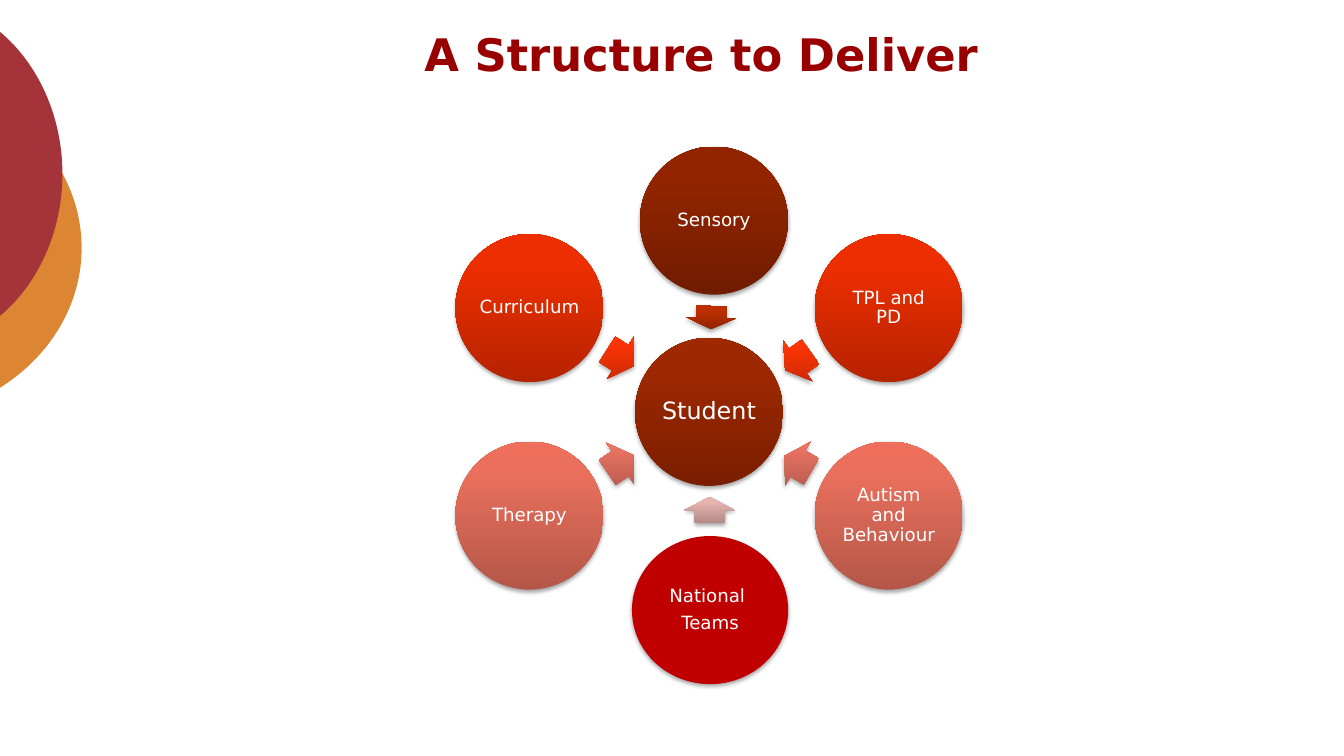
from dataclasses import dataclass

from lxml.etree import SubElement
from pptx import Presentation
from pptx.dml.color import RGBColor
from pptx.enum.shapes import MSO_SHAPE as Preset
from pptx.enum.text import MSO_ANCHOR as Anchor, PP_ALIGN as Align
from pptx.oxml import parse_xml
from pptx.oxml.ns import nsdecls, qn
from pptx.shapes.autoshape import Shape
from pptx.slide import Slide
from pptx.text.text import TextFrame
from pptx.util import Pt

Shades = tuple[str, ...]
Point = tuple[float, float]


@dataclass(frozen=True)
class Theme:
    font: str = "DejaVu Sans"
    title_size: float = 32
    centre_size: float = 17
    label_size: float = 13
    title: str = "990000"
    label: str = "FFFFFF"
    orange: str = "DC8633"
    crimson: str = "A4343A"
    # Gradients run from the bottom (dark) to the top (light).
    student: Shades = ("7A1E00", "9E2800", "9F2800")
    sensory: Shades = ("711C00", "922500", "932500")
    sensory_arrow: Shades = ("912400", "BD2F00", "BE2F00")
    scarlet: Shades = ("B62300", "ED2E00", "EE2E00")
    scarlet_arrow: Shades = ("C52804", "FF3506", "FF3607")
    salmon: Shades = ("B45748", "EA705D", "EE6F5B")
    salmon_arrow: Shades = ("B5594C", "EB7463", "EF7260")
    national: Shades = ("C00000",)
    national_arrow: Shades = ("B28A87", "E7B3AF", "E9B3AF")


@dataclass(frozen=True)
class Circle:
    """A labelled circle, placed by its offset from the hub."""
    text: str
    dx: float
    dy: float
    shades: Shades
    size: float = 13
    width: float = 105.8


@dataclass(frozen=True)
class Arrow:
    """An arrow towards the hub, placed by its offset from the hub."""
    dx: float
    dy: float
    rotation: float
    shades: Shades
    length: float = 22.3


@dataclass(frozen=True)
class EdgeCurve:
    """A bulge from the left slide edge, drawn inside a wider frame."""
    left: float
    top: float
    width: float
    height: float
    middle: float
    shoulder: Point
    neck: Point
    half_height: float
    color: str


THEME = Theme()
HUB_X, HUB_Y = 506.5, 294.2
DIAMETER, ARROW_HEIGHT = 105.8, 36
SIDE_X, SIDE_Y = 128.3, 74.1
ARROW_X, ARROW_Y = 63.4, 37
EDGE_X = -1.4
GRADIENT_STOPS = (0, 80000, 100000)

CURVES = [
    EdgeCurve(-223.2, 54, 281.5, 246.2, 177.1, (36, 77.8), (58.3, 40.3),
              100.8, THEME.orange),
    EdgeCurve(-167.8, 0, 212.4, 248.4, 124.2, (27.4, 79.4), (44.6, 40.7),
              102.6, THEME.crimson),
]
STUDENT = Circle("Student", 0, 0, THEME.student, THEME.centre_size)
SPOKES = [
    (Arrow(1.5, -67.3, 91.3, THEME.sensory_arrow, 16.6),
     Circle("Sensory", 3.5, -136.6, THEME.sensory)),
    (Arrow(ARROW_X, -36.4, 144.3, THEME.scarlet_arrow),
     Circle("TPL and PD", SIDE_X, -SIDE_Y, THEME.scarlet)),
    (Arrow(ARROW_X, ARROW_Y, 209.8, THEME.salmon_arrow),
     Circle("Autism and Behaviour", SIDE_X, SIDE_Y, THEME.salmon)),
    (Arrow(0.4, 70.1, 270, THEME.national_arrow, 18.7),
     Circle("National \nTeams", 0.7, 141.6, THEME.national, width=111.6)),
    (Arrow(-ARROW_X, ARROW_Y, 326, THEME.salmon_arrow),
     Circle("Therapy", -SIDE_X, SIDE_Y, THEME.salmon)),
    (Arrow(-ARROW_X, -38.6, 32.5, THEME.scarlet_arrow),
     Circle("Curriculum", -SIDE_X, -SIDE_Y, THEME.scarlet)),
]


def fill_solid(shape: Shape, color: str) -> None:
    shape.fill.solid()
    shape.fill.fore_color.rgb = RGBColor.from_string(color)


def fill_gradient(shape: Shape, shades: Shades) -> None:
    """Fill bottom to top, independent of the shape's rotation."""
    gradient = parse_xml(f'<a:gradFill {nsdecls("a")} rotWithShape="0"/>')
    stops = SubElement(gradient, qn("a:gsLst"))
    for position, shade in zip(GRADIENT_STOPS, shades):
        stop = SubElement(stops, qn("a:gs"), pos=str(position))
        SubElement(stop, qn("a:srgbClr"), val=shade)
    SubElement(gradient, qn("a:lin"), ang="16200000", scaled="0")
    shape._element.spPr.find(qn("a:prstGeom")).addnext(gradient)


def add_shadow(shape: Shape) -> None:
    shape.shadow.inherit = False
    effects = shape._element.spPr.find(qn("a:effectLst"))
    shadow = SubElement(effects, qn("a:outerShdw"), blurRad=str(Pt(3.1)),
                        dist=str(Pt(1.8)), dir="5400000", rotWithShape="0")
    color = SubElement(shadow, qn("a:srgbClr"), val="000000")
    SubElement(color, qn("a:alpha"), val="35000")


def add_hub_shape(page: Slide, preset: Preset, dx: float, dy: float,
                  width: float, height: float, shades: Shades) -> Shape:
    """Add a shadowed shape centred at an offset from the hub."""
    shape = page.shapes.add_shape(
        preset, Pt(HUB_X + dx - width / 2), Pt(HUB_Y + dy - height / 2),
        Pt(width), Pt(height))
    shape.line.fill.background()
    if len(shades) == 1:
        fill_solid(shape, shades[0])
    else:
        fill_gradient(shape, shades)
    add_shadow(shape)
    return shape


def format_text(frame: TextFrame, size: float, color: str, bold: bool = False) -> None:
    frame.word_wrap = True
    for para in frame.paragraphs:
        para.alignment = Align.CENTER
        for span in para.runs:
            span.font.name = THEME.font
            span.font.size = Pt(size)
            span.font.bold = bold
            span.font.color.rgb = RGBColor.from_string(color)


def add_circle(page: Slide, circle: Circle) -> None:
    shape = add_hub_shape(page, Preset.OVAL, circle.dx, circle.dy,
                          circle.width, DIAMETER, circle.shades)
    frame = shape.text_frame
    frame.text = circle.text
    frame.vertical_anchor = Anchor.MIDDLE
    frame.margin_left = frame.margin_right = Pt(1.4)
    frame.margin_top = frame.margin_bottom = Pt(1.4)
    format_text(frame, circle.size, THEME.label)
    for para in frame.paragraphs:
        para.line_spacing = 0.9
        para.space_after = Pt(0.35 * circle.size)


def add_arrow(page: Slide, arrow: Arrow) -> None:
    shape = add_hub_shape(page, Preset.RIGHT_ARROW, arrow.dx, arrow.dy,
                          arrow.length, ARROW_HEIGHT, arrow.shades)
    shape.adjustments[0] = 0.6
    shape.adjustments[1] = 0.5
    shape.rotation = arrow.rotation


def add_edge_curve(page: Slide, curve: EdgeCurve) -> None:
    """Draw two mirrored cubic curves that meet at the tip."""
    start = (EDGE_X, -curve.half_height)
    tip = (curve.neck[0], 0)
    (shoulder_x, shoulder_y), (neck_x, neck_y) = curve.shoulder, curve.neck
    segments = [
        ("moveTo", [start]),
        ("cubicBezTo", [(shoulder_x, -shoulder_y), (neck_x, -neck_y), tip]),
        ("cubicBezTo", [(neck_x, neck_y), (shoulder_x, shoulder_y),
                        (EDGE_X, curve.half_height)]),
        ("close", []),
    ]
    right, bottom = curve.left + curve.width, curve.top + curve.height
    builder = page.shapes.build_freeform(Pt(curve.left), Pt(curve.top))
    builder.add_line_segments([(Pt(right), Pt(bottom))])
    shape = builder.convert_to_shape()
    outline = next(shape._element.iter(qn("a:path")))
    for child in list(outline):
        outline.remove(child)
    for command, points in segments:
        segment = SubElement(outline, qn(f"a:{command}"))
        for x, y in points:
            SubElement(segment, qn("a:pt"), x=str(Pt(x - curve.left)),
                       y=str(Pt(curve.middle + y - curve.top)))
    fill_solid(shape, curve.color)
    shape.line.fill.background()
    shape.shadow.inherit = False


def add_title(page: Slide, text: str) -> None:
    box = page.shapes.add_textbox(Pt(194), Pt(15.5), Pt(614.2), Pt(85))
    box.text_frame.text = text
    format_text(box.text_frame, THEME.title_size, THEME.title, bold=True)


def main() -> None:
    deck = Presentation()
    deck.slide_width, deck.slide_height = Pt(960), Pt(540)
    page = deck.slides.add_slide(deck.slide_layouts[6])
    for curve in CURVES:
        add_edge_curve(page, curve)
    add_circle(page, STUDENT)
    for arrow, circle in SPOKES:
        add_arrow(page, arrow)
        add_circle(page, circle)
    add_title(page, "A Structure to Deliver")
    deck.save("out.pptx")


if __name__ == "__main__":
    main()
